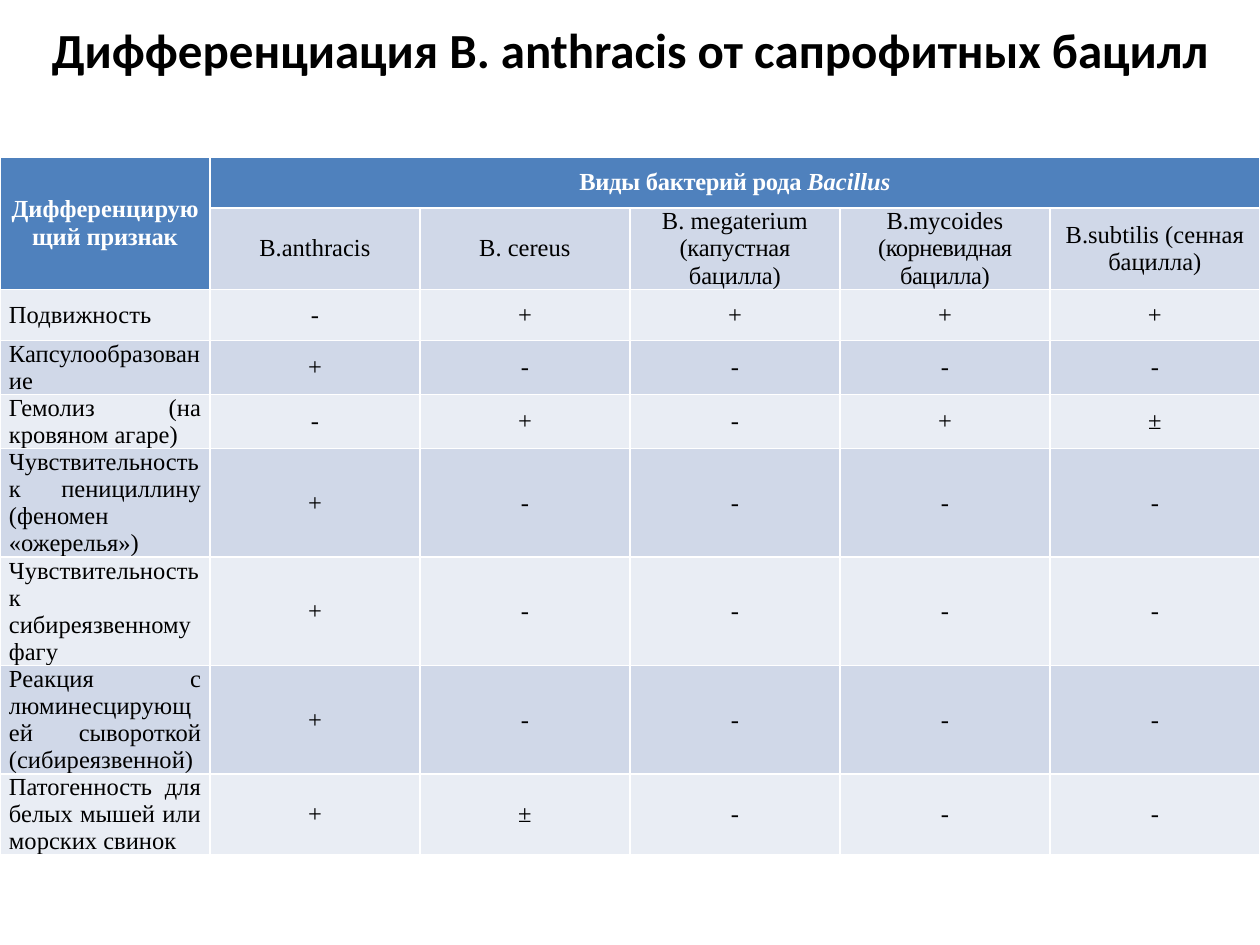
"""Build a slide with a table that tells B. anthracis from saprophytic bacilli."""
from pptx import Presentation
from pptx.dml.color import RGBColor
from pptx.enum.text import MSO_ANCHOR as ANCHOR, PP_ALIGN as ALIGN
from pptx.util import Emu, Pt

COLORS = {"head": "4F81BD", "dark": "D0D8E8", "light": "E9EDF4", "white": "FFFFFF", "black": "000000"}


def px(n):
    return Emu(round(n * 914400 / 126))


def fill_cell(cell, runs, fill, color="black", align=ALIGN.CENTER, bold=False):
    cell.fill.solid()
    cell.fill.fore_color.rgb = RGBColor.from_string(COLORS[fill])
    cell.vertical_anchor = ANCHOR.MIDDLE
    cell.margin_left = cell.margin_right = px(9)
    cell.margin_top = cell.margin_bottom = 0
    p = cell.text_frame.paragraphs[0]
    p.alignment = align
    for text, spacing, italic in runs:
        r = p.add_run()
        r.text = text
        r.font.name = "Times New Roman"
        r.font.size = Pt(14)
        r.font.bold = bold
        r.font.italic = italic
        r.font.color.rgb = RGBColor.from_string(COLORS[color])
        r._r.get_or_add_rPr().set("spc", str(spacing))


prs = Presentation()
prs.slide_width, prs.slide_height = px(1260), px(945)
s = prs.slides.add_slide(prs.slide_layouts[5])

title = s.shapes.title
title.left, title.top, title.width, title.height = px(0), px(0), px(1260), px(157)
tf = title.text_frame
tf.text = "Дифференциация В. anthracis от сапрофитных бацилл"
tf.vertical_anchor = ANCHOR.MIDDLE
tf.margin_bottom = px(66)
p = tf.paragraphs[0]
p.alignment = ALIGN.CENTER
r = p.runs[0]
r.font.name, r.font.size, r.font.bold = "Calibri", Pt(28), True
r.font.color.rgb = RGBColor.from_string(COLORS["black"])

species = [
    [("B.anthracis", 0, False)],
    [("B. cereus", 0, False)],
    [("B. megaterium ", 0, False), ("(капустная бацилла)", -10, False)],
    [("B.mycoides ", 0, False), ("(корневидная бацилла)", -30, False)],
    [("B.subtilis (сенная бацилла)", 0, False)],
]
features = [
    ("Подвижность", "-++++"),
    ("Капсулообразование", "+----"),
    ("Гемолиз (на кровяном агаре)", "-+-+±"),
    ("Чувствительность к пенициллину (феномен «ожерелья»)", "+----"),
    ("Чувствительность к сибиреязвенному фагу", "+----"),
    ("Реакция с люминесцирующей сывороткой (сибиреязвенной)", "+----"),
    ("Патогенность для белых мышей или морских свинок", "+±---"),
]

rows, cols = len(features) + 2, len(species) + 1
frame = s.shapes.add_table(rows, cols, px(0), px(157), px(1260), px(51 * rows))
table = frame.table
frame.height = px(748)
table.cell(0, 0).merge(table.cell(1, 0))
table.cell(0, 1).merge(table.cell(0, cols - 1))

feature_head = [("Дифференци", 0, False), ("рующий признак", -10, False)]
species_head = [("Виды бактерий рода ", -20, False), ("Васillus", 0, True)]
fill_cell(table.cell(0, 0), feature_head, "head", "white", bold=True)
fill_cell(table.cell(0, 1), species_head, "head", "white", bold=True)
for col, runs in enumerate(species, 1):
    fill_cell(table.cell(1, col), runs, "dark")

for row, (feature, signs) in enumerate(features, 2):
    fill = "dark" if row % 2 else "light"
    fill_cell(table.cell(row, 0), [(feature, 0, False)], fill, align=ALIGN.JUSTIFY)
    for col, sign in enumerate(signs, 1):
        fill_cell(table.cell(row, col), [(sign, 0, False)], fill)

prs.save("out.pptx")
